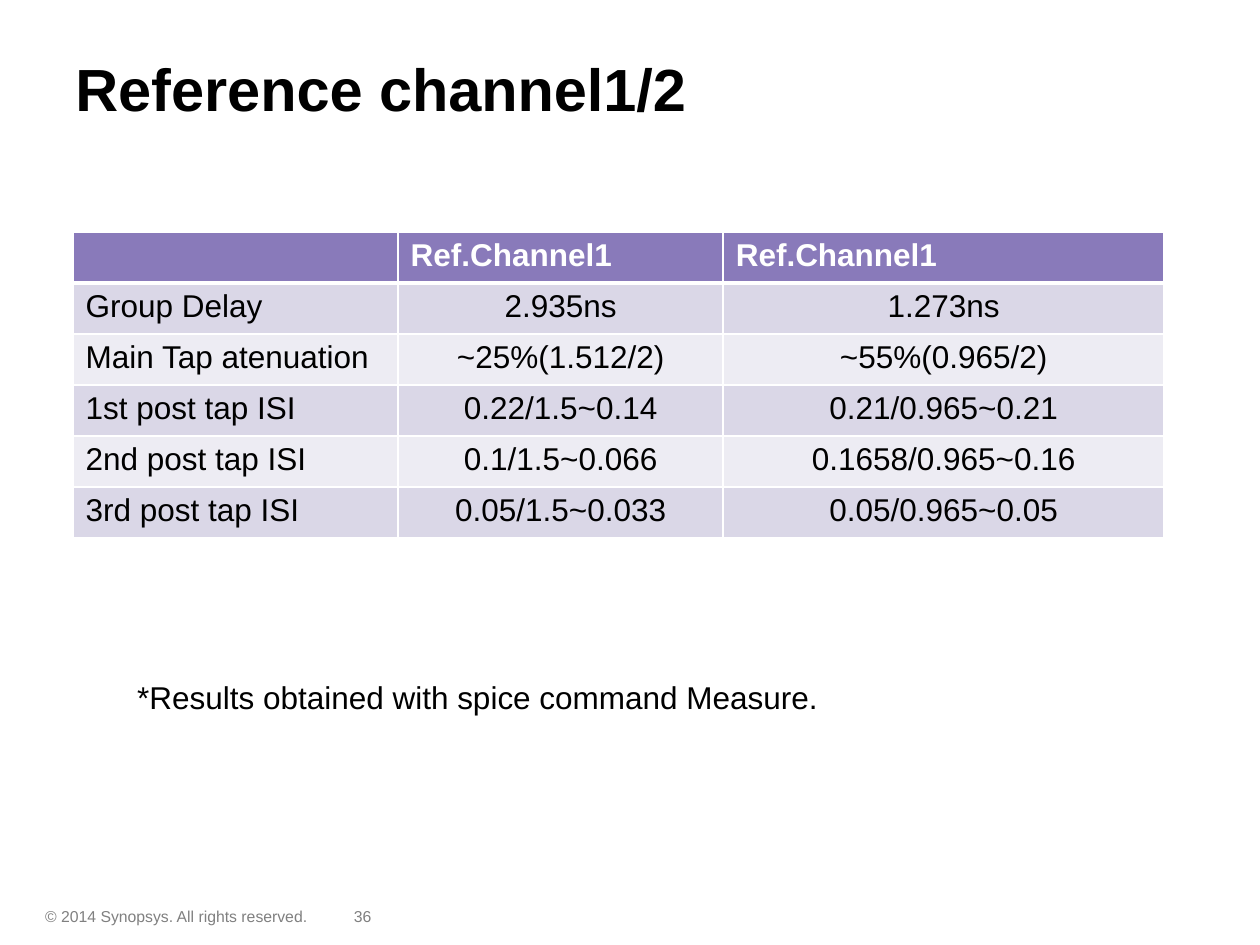
"""Build the reference channel comparison slide."""
import pptx
import pptx.util
import pptx.dml.color
import pptx.enum.text
import pptx.oxml
import pptx.oxml.ns

Inches = pptx.util.Inches
COLORS = {"ink": "000000", "paper": "FFFFFF", "footer": "808080",
          "header": "897ABA", "odd": "DAD7E7", "even": "EDECF3"}
WIDTH, HEIGHT = 10, 7.5
TABLE_LEFT, TABLE_TOP, ROW_HEIGHT = 0.58, 1.84, 0.405
COLUMN_WIDTHS = (2.58, 2.58, 3.5)
ROWS = [
    ("", "Ref.Channel1", "Ref.Channel1"),
    ("Group Delay", "2.935ns", "1.273ns"),
    ("Main Tap atenuation", "~25%(1.512/2)", "~55%(0.965/2)"),
    ("1st post tap ISI", "0.22/1.5~0.14", "0.21/0.965~0.21"),
    ("2nd post tap ISI", "0.1/1.5~0.066", "0.1658/0.965~0.16"),
    ("3rd post tap ISI", "0.05/1.5~0.033", "0.05/0.965~0.05"),
]
TEXTS = [
    ("© 2014 Synopsys. All rights reserved.", (0.26, 7.15, 3.08, 0.25), 9, "footer", False, True),
    ("36", (2.71, 7.15, 0.7, 0.25), 9, "footer", False, True),
    ("Reference channel1/2", (0.5, 0.07, 9.5, 1.25), 34, "ink", True, True),
    ("*Results obtained with spice command Measure.", (0.99, 5.33, 5.66, 0.4), 18, "ink", False, False),
]


def rgb(name):
    return pptx.dml.color.RGBColor.from_string(COLORS[name])


def add_span(paragraph, text, size, color, bold=False):
    span = paragraph.add_run()
    span.text = text
    span.font.name = "Arial"
    span.font.size = pptx.util.Pt(size)
    span.font.bold = bold
    span.font.color.rgb = rgb(color)


def add_text(page, text, place, size, color, bold, wrap):
    box = page.shapes.add_textbox(*map(Inches, place))
    frame = box.text_frame
    frame.word_wrap = wrap
    frame.vertical_anchor = (pptx.enum.text.MSO_ANCHOR.MIDDLE if bold
                             else pptx.enum.text.MSO_ANCHOR.TOP)
    add_span(frame.paragraphs[0], text, size, color, bold)


def set_borders(cell, widths):
    properties = cell._tc.get_or_add_tcPr()
    for position, (side, width) in enumerate(widths.items()):
        properties.insert(position, pptx.oxml.parse_xml(
            f'<a:{side} {pptx.oxml.ns.nsdecls("a")} w="{pptx.util.Pt(width)}"><a:solidFill>'
            f'<a:srgbClr val="{COLORS["paper"]}"/></a:solidFill></a:{side}>'))


def add_table(page):
    table = page.shapes.add_table(
        len(ROWS), len(COLUMN_WIDTHS), Inches(TABLE_LEFT), Inches(TABLE_TOP),
        Inches(sum(COLUMN_WIDTHS)), Inches(ROW_HEIGHT * len(ROWS))).table
    for column, width in zip(table.columns, COLUMN_WIDTHS):
        column.width = Inches(width)
    for i, values in enumerate(ROWS):
        table.rows[i].height = Inches(ROW_HEIGHT)
        header = i == 0
        fill = "header" if header else ("even", "odd")[i % 2]
        for j, value in enumerate(values):
            cell = table.cell(i, j)
            cell.fill.solid()
            cell.fill.fore_color.rgb = rgb(fill)
            set_borders(cell, {"lnL": 1, "lnR": 1, "lnT": 3 if i == 1 else 1,
                               "lnB": 3 if header else 1})
            paragraph = cell.text_frame.paragraphs[0]
            if j and not header:
                paragraph.alignment = pptx.enum.text.PP_ALIGN.CENTER
            if value:
                add_span(paragraph, value, 18, "paper" if header else "ink", header)


def main():
    deck = pptx.Presentation()
    deck.slide_width, deck.slide_height = Inches(WIDTH), Inches(HEIGHT)
    page = deck.slides.add_slide(deck.slide_layouts[6])
    for item in TEXTS:
        add_text(page, *item)
    add_table(page)
    deck.save("out.pptx")


if __name__ == "__main__":
    main()
